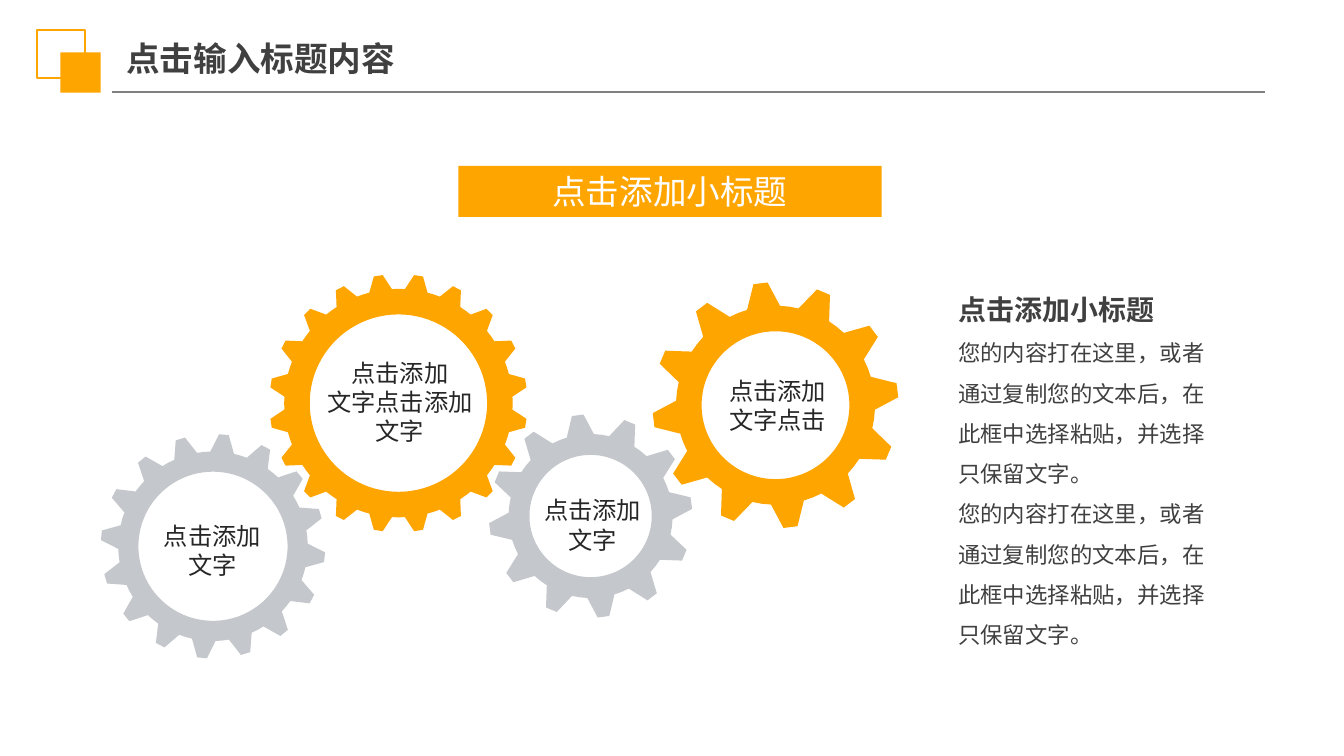
from dataclasses import dataclass
from math import cos, radians, sin

from lxml import etree
from pptx import Presentation
from pptx import util as u
from pptx.dml.color import RGBColor
from pptx.enum import shapes, text
from pptx.oxml import ns


@dataclass(frozen=True)
class Theme:
    """Colours, type sizes and font of the deck."""
    accent: str = "FFA500"
    grey: str = "C4C7CB"
    rule: str = "808080"
    ink: str = "404040"
    label_ink: str = "262626"
    white: str = "FFFFFF"
    font: str = "Noto Sans CJK SC"
    title: int = 18
    heading: int = 15
    label: int = 13
    body: int = 12


def rgb(value):
    """Turn a hex string into a colour."""
    return RGBColor.from_string(value)


def write(frame, content, *, size, color, font, bold=False, align=text.PP_ALIGN.LEFT,
          spacing=1.0, bullet_free=False):
    """Add each line of content to the frame as a formatted paragraph."""
    for line in content.split("\n"):
        last = frame.paragraphs[-1]
        paragraph = frame.add_paragraph() if last.runs else last
        if bullet_free:
            properties = paragraph._p.get_or_add_pPr()
            properties.set("marL", "0")
            properties.set("indent", "0")
            etree.SubElement(properties, ns.qn("a:buNone"))
        paragraph.alignment = align
        paragraph.line_spacing = spacing
        paragraph.space_before = u.Pt(0)
        run = paragraph.add_run()
        run.text = line
        run.font.size = u.Pt(size)
        run.font.bold = bold
        run.font.color.rgb = rgb(color)
        run.font.name = font
        etree.SubElement(run._r.get_or_add_rPr(), ns.qn("a:ea"), typeface=font)


class Sheet:
    """Draws themed elements on a slide with a square grid 100 columns wide."""

    def __init__(self, deck, theme):
        """Add a title-and-body slide to the deck."""
        self.theme = theme
        self.unit = deck.slide_width / 100
        self.slide = deck.slides.add_slide(deck.slide_layouts[1])

    def grid(self, *cells):
        """Convert grid cells to slide lengths."""
        return [u.Emu(round(cell * self.unit)) for cell in cells]

    def frame(self, shape, inset=(0.07, 0.04), anchor=text.MSO_ANCHOR.MIDDLE,
              fit=text.MSO_AUTO_SIZE.NONE):
        """Prepare the text frame of a shape."""
        frame = shape.text_frame
        frame.word_wrap = True
        frame.auto_size = fit
        frame.vertical_anchor = anchor
        frame.margin_left = frame.margin_right = u.Inches(inset[0])
        frame.margin_top = frame.margin_bottom = u.Inches(inset[1])
        return frame

    def place(self, shape, box):
        """Move a placeholder to a grid box."""
        shape.left, shape.top, shape.width, shape.height = self.grid(*box)

    def title(self, content, box):
        """Fill the title placeholder."""
        heading = self.slide.shapes.title
        self.place(heading, box)
        write(self.frame(heading, (0, 0.05)), content, size=self.theme.title,
              color=self.theme.ink, font=self.theme.font, bold=True)

    def body(self, heading, passages, box):
        """Fill the body placeholder with a heading and passages."""
        body = self.slide.placeholders[1]
        self.place(body, box)
        frame = self.frame(body, anchor=text.MSO_ANCHOR.TOP,
                           fit=text.MSO_AUTO_SIZE.SHAPE_TO_FIT_TEXT)
        style = dict(color=self.theme.ink, font=self.theme.font, spacing=1.5, bullet_free=True)
        write(frame, heading, size=self.theme.heading, bold=True, **style)
        write(frame, passages, size=self.theme.body, **style)

    def rectangle(self, box, fill=None, line=None):
        """Draw a filled or outlined rectangle."""
        block = self.slide.shapes.add_shape(shapes.MSO_SHAPE.RECTANGLE, *self.grid(*box))
        block.shadow.inherit = False
        if fill:
            block.fill.solid()
            block.fill.fore_color.rgb = rgb(fill)
        else:
            block.fill.background()
        if line:
            block.line.color.rgb = rgb(line)
            block.line.width = u.Pt(1)
        else:
            block.line.fill.background()
        return block

    def banner(self, content, box):
        """Draw an accent bar with centred text."""
        bar = self.rectangle(box, fill=self.theme.accent)
        write(self.frame(bar), content, size=self.theme.title, color=self.theme.white,
              font=self.theme.font, align=text.PP_ALIGN.CENTER)

    def rule(self, start, end):
        """Draw a thin straight line."""
        rule = self.slide.shapes.add_connector(
            shapes.MSO_CONNECTOR.STRAIGHT, *self.grid(*start, *end))
        rule.line.color.rgb = rgb(self.theme.rule)
        rule.line.width = u.Pt(0.75)
        etree.SubElement(rule._element.spPr, ns.qn("a:effectLst"))

    def gear(self, center, radii, teeth, phase, fill):
        """Draw a toothed ring; radii are tip, root and hole, phase is in degrees."""
        def point(radius, angle):
            turn = radians(angle)
            return self.grid(center[0] + radius * sin(turn), center[1] - radius * cos(turn))

        tip, root, hole = radii
        pitch = 360 / teeth
        profile = [(root, -0.32), (tip, -0.11), (tip, 0.11), (root, 0.32), (root, 0.5)]
        rim = [point(radius, phase + pitch * (tooth + share))
               for tooth in range(teeth) for radius, share in profile]
        bore = [point(hole, angle) for angle in range(0, -360, -4)]
        builder = self.slide.shapes.build_freeform(*rim[0], scale=1.0)
        builder.add_line_segments(rim[1:], close=True)
        builder.move_to(*bore[0])
        builder.add_line_segments(bore[1:], close=True)
        wheel = builder.convert_to_shape()
        wheel.shadow.inherit = False
        wheel.fill.solid()
        wheel.fill.fore_color.rgb = rgb(fill)
        wheel.line.fill.background()

    def label(self, content, box):
        """Add a centred text box."""
        caption = self.slide.shapes.add_textbox(*self.grid(*box))
        frame = self.frame(caption, fit=text.MSO_AUTO_SIZE.SHAPE_TO_FIT_TEXT)
        write(frame, content, size=self.theme.label, color=self.theme.label_ink,
              font=self.theme.font, align=text.PP_ALIGN.CENTER)


def main():
    """Build the gear slide."""
    deck = Presentation()
    deck.slide_width = u.Inches(10)
    deck.slide_height = deck.slide_width * 9 // 16
    theme = Theme()
    sheet = Sheet(deck, theme)

    sheet.rule((8.3, 6.85), (94.1, 6.85))
    sheet.rectangle((2.75, 2.25, 3.55, 3.55), line=theme.accent)
    sheet.rectangle((4.5, 3.9, 3, 3), fill=theme.accent)
    sheet.title("点击输入标题内容", (9.4, 2.2, 23.3, 4.2))

    passage = "您的内容打在这里，或者通过复制您的文本后，在此框中选择粘贴，并选择只保留文字。"
    sheet.body("点击添加小标题", f"{passage}\n{passage}", (70.6, 20.1, 21.3, 28.8))

    gears = [
        ((29.65, 30), (9.6, 8.5, 6.6), 20, 9, theme.accent,
         "点击添加\n文字点击添加\n文字", (23.2, 26.1, 13.1, 7.6)),
        ((43.95, 38.4), (7.57, 6.1, 4.55), 12, -7.3, theme.grey,
         "点击添加\n文字", (39.5, 36.4, 9.2, 5.3)),
        ((15.85, 40.65), (8.35, 7.05, 5.55), 16, 5.6, theme.grey,
         "点击添加\n文字", (11.2, 38.3, 9.2, 5.3)),
        ((57.7, 30.15), (9.15, 7.4, 5.5), 12, -7, theme.accent,
         "点击添加\n文字点击", (51.3, 27.5, 13.1, 5.3)),
    ]
    for center, radii, teeth, phase, fill, caption, box in gears:
        sheet.gear(center, radii, teeth, phase, fill)
        sheet.label(caption, box)

    sheet.banner("点击添加小标题", (34.1, 12.35, 31.5, 3.8))
    deck.save("out.pptx")


if __name__ == "__main__":
    main()
